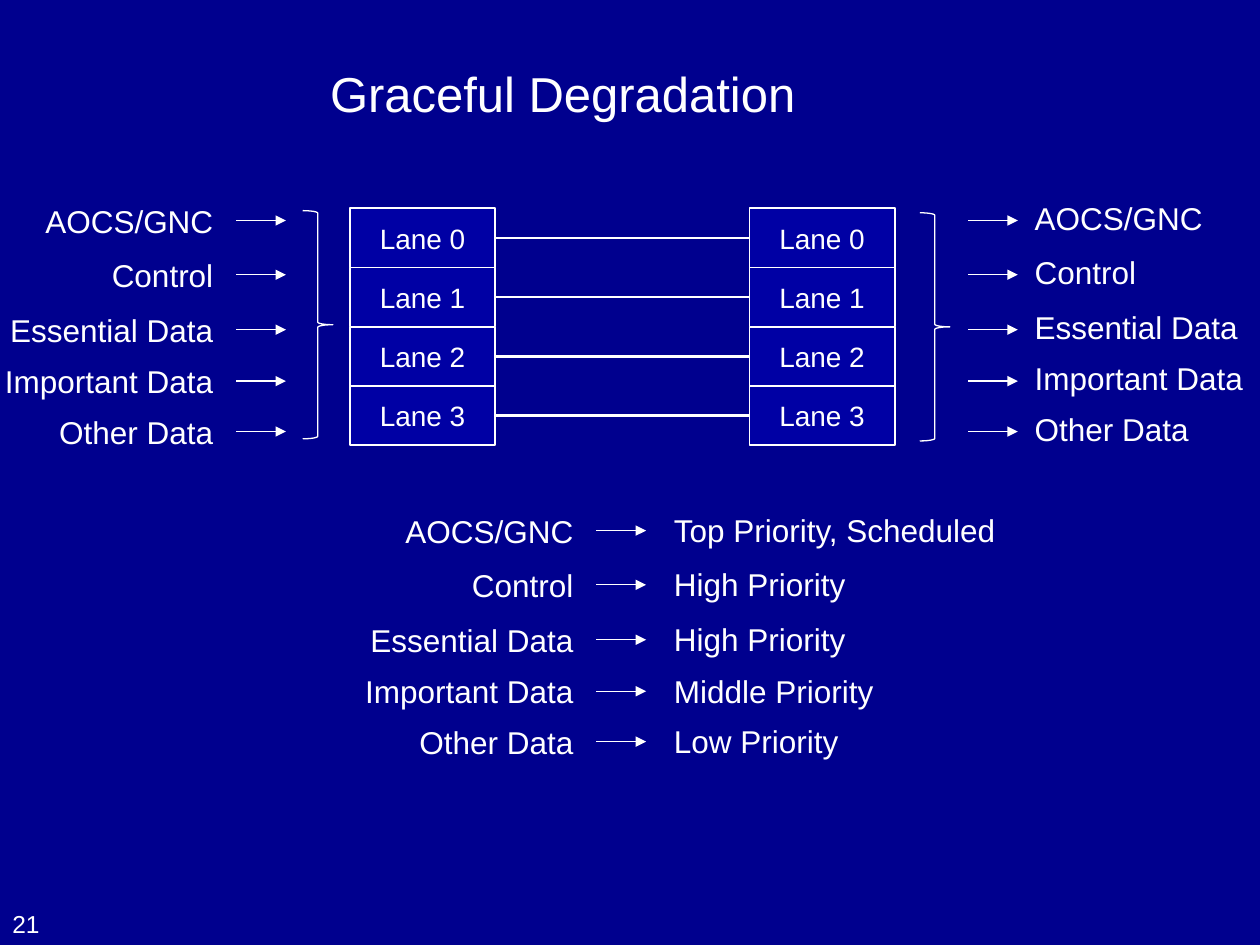
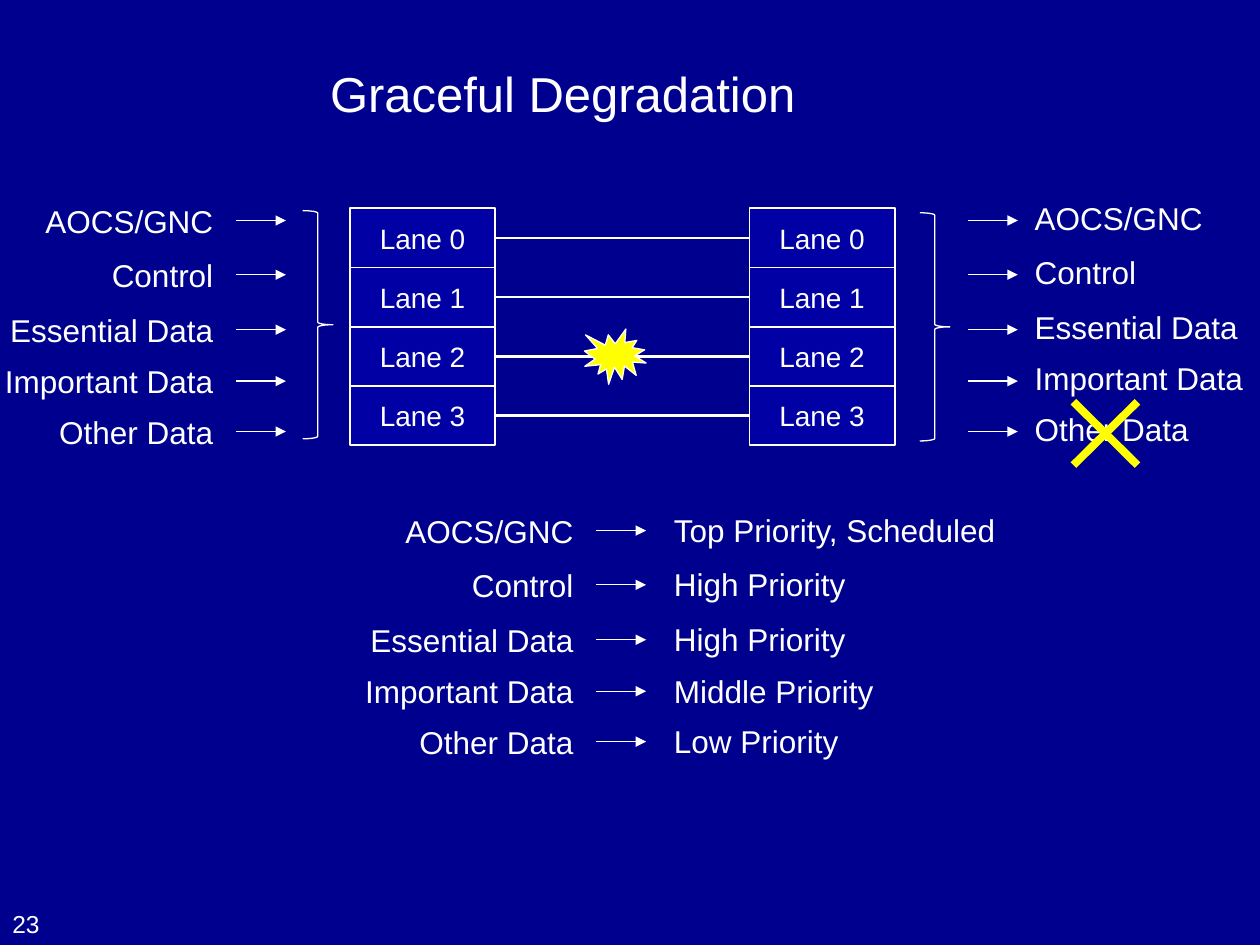
from lxml import etree
from pptx import Presentation
from pptx.dml.color import RGBColor
from pptx.enum import shapes as kind, text as txt
from pptx.oxml.ns import qn
from pptx.util import Pt

NAVY = RGBColor(0x00, 0x00, 0x8E)
BLUE = RGBColor(0x00, 0x00, 0xA4)
WHITE = RGBColor(0xFF, 0xFF, 0xFF)
YELLOW = RGBColor(0xFF, 0xFF, 0x00)
FONT = "Arial"
LEFT, CENTER, RIGHT = txt.PP_ALIGN.LEFT, txt.PP_ALIGN.CENTER, txt.PP_ALIGN.RIGHT

TITLE = "Graceful Degradation"
PAGES = [("21", False), ("23", True)]
LANES = ["Lane 0", "Lane 1", "Lane 2", "Lane 3"]
FLOWS = [
    ("AOCS/GNC", 111.6, "Top Priority, Scheduled", 200),
    ("Control", 73.4, "High Priority", 114),
    ("Essential Data", 131.8, "High Priority", 114),
    ("Important Data", 134.6, "Middle Priority", 129.6),
    ("Other Data", 103.7, "Low Priority", 109.4),
]
STEPS = [0, 31, 62.4, 91.8, 120.6]

LANE_W, LANE_H, LANE_TOP = 83, 33.85, 119
LANE_XS = [200, 428.3]
FLOW_TOP, RANK_TOP = 126, 303.2
IN_X, OUT_X, RANK_X = 135, 553.2, 340.8
ARROW = 28.4
BRACES = [(173, 120.4), (525.6, 121.6)]
BURST = (334, 188, 35.2, 31.6)
CROSS = (613.4, 229.6, 650, 265.8)


def box(item, x, y, w, h):
    item.left, item.top, item.width, item.height = Pt(x), Pt(y), Pt(w), Pt(h)


def write(frame, words, size, align=LEFT, anchor=txt.MSO_ANCHOR.TOP):
    frame.text = words
    frame.vertical_anchor = anchor
    para = frame.paragraphs[0]
    para.alignment = align
    font = para.runs[0].font
    font.name, font.size, font.color.rgb = FONT, Pt(size), WHITE


def label(slide, words, x, y, w, align=LEFT):
    area = slide.shapes.add_textbox(Pt(x), Pt(y), Pt(w), Pt(29))
    area.text_frame.word_wrap = False
    area.text_frame.auto_size = txt.MSO_AUTO_SIZE.SHAPE_TO_FIT_TEXT
    write(area.text_frame, words, 18, align)


def stroke(slide, x1, y1, x2, y2, width=0.75, color=WHITE, arrow=False):
    line = slide.shapes.add_connector(
        kind.MSO_CONNECTOR.STRAIGHT, Pt(x1), Pt(y1), Pt(x2), Pt(y2))
    line.line.width = Pt(width)
    line.line.color.rgb = color
    props = line._element.spPr
    if arrow:
        etree.SubElement(props.find(qn("a:ln")), qn("a:tailEnd"), type="triangle")
    etree.SubElement(props, qn("a:effectLst"))


def form(slide, shape, x, y, w, h, fill=None, width=0.75):
    item = slide.shapes.add_shape(shape, Pt(x), Pt(y), Pt(w), Pt(h))
    item.shadow.inherit = False
    if fill is None:
        item.fill.background()
    else:
        item.fill.solid()
        item.fill.fore_color.rgb = fill
    item.line.color.rgb = WHITE
    item.line.width = Pt(width)
    return item


def frame(deck, page):
    slide = deck.slides.add_slide(deck.slide_layouts[5])
    title = slide.shapes.title
    box(title, 181.4, 31.7, 538.6, 42.5)
    title.text_frame.auto_size = txt.MSO_AUTO_SIZE.NONE
    write(title.text_frame, TITLE, 28, LEFT, txt.MSO_ANCHOR.MIDDLE)
    foot = slide.shapes.add_textbox(0, Pt(502.6), Pt(76.3), Pt(37.4))
    foot.text_frame.word_wrap = True
    write(foot.text_frame, page, 14, LEFT, txt.MSO_ANCHOR.BOTTOM)
    return slide


def lanes(slide):
    for row, name in enumerate(LANES):
        y = LANE_TOP + row * LANE_H
        for x in LANE_XS:
            cell = form(slide, kind.MSO_SHAPE.RECTANGLE,
                        x, y, LANE_W, LANE_H, BLUE, 1)
            write(cell.text_frame, name, 16, CENTER, txt.MSO_ANCHOR.MIDDLE)
        mid = y + LANE_H / 2
        stroke(slide, LANE_XS[0] + LANE_W, mid, LANE_XS[1], mid, 1.5)


def flows(slide):
    for x, y in BRACES:
        form(slide, kind.MSO_SHAPE.RIGHT_BRACE, x, y, 17.2, 130.4)
    for (name, wide, rank, span), step in zip(FLOWS, STEPS):
        high, low = FLOW_TOP + step, RANK_TOP + step
        for x, y in [(IN_X, high), (OUT_X, high), (RANK_X, low)]:
            stroke(slide, x, y, x + ARROW, y, arrow=True)
        for x, y in [(IN_X, high), (RANK_X, low)]:
            label(slide, name, x - 6 - wide, y - 14.4, wide, RIGHT)
        label(slide, name, OUT_X + 31, high - 16, wide)
        label(slide, rank, RANK_X + 37.2, low - 14.8, span)


def fault(slide):
    form(slide, kind.MSO_SHAPE.EXPLOSION1, *BURST, YELLOW)
    x1, y1, x2, y2 = CROSS
    stroke(slide, x1, y1, x2, y2, 4.5, YELLOW)
    stroke(slide, x1, y2, x2, y1, 4.5, YELLOW)


def main():
    deck = Presentation()
    deck.slide_width, deck.slide_height = Pt(720), Pt(540)
    back = deck.slide_master.background.fill
    back.solid()
    back.fore_color.rgb = NAVY
    for page, broken in PAGES:
        slide = frame(deck, page)
        lanes(slide)
        flows(slide)
        if broken:
            fault(slide)
    deck.save("out.pptx")


if __name__ == "__main__":
    main()
